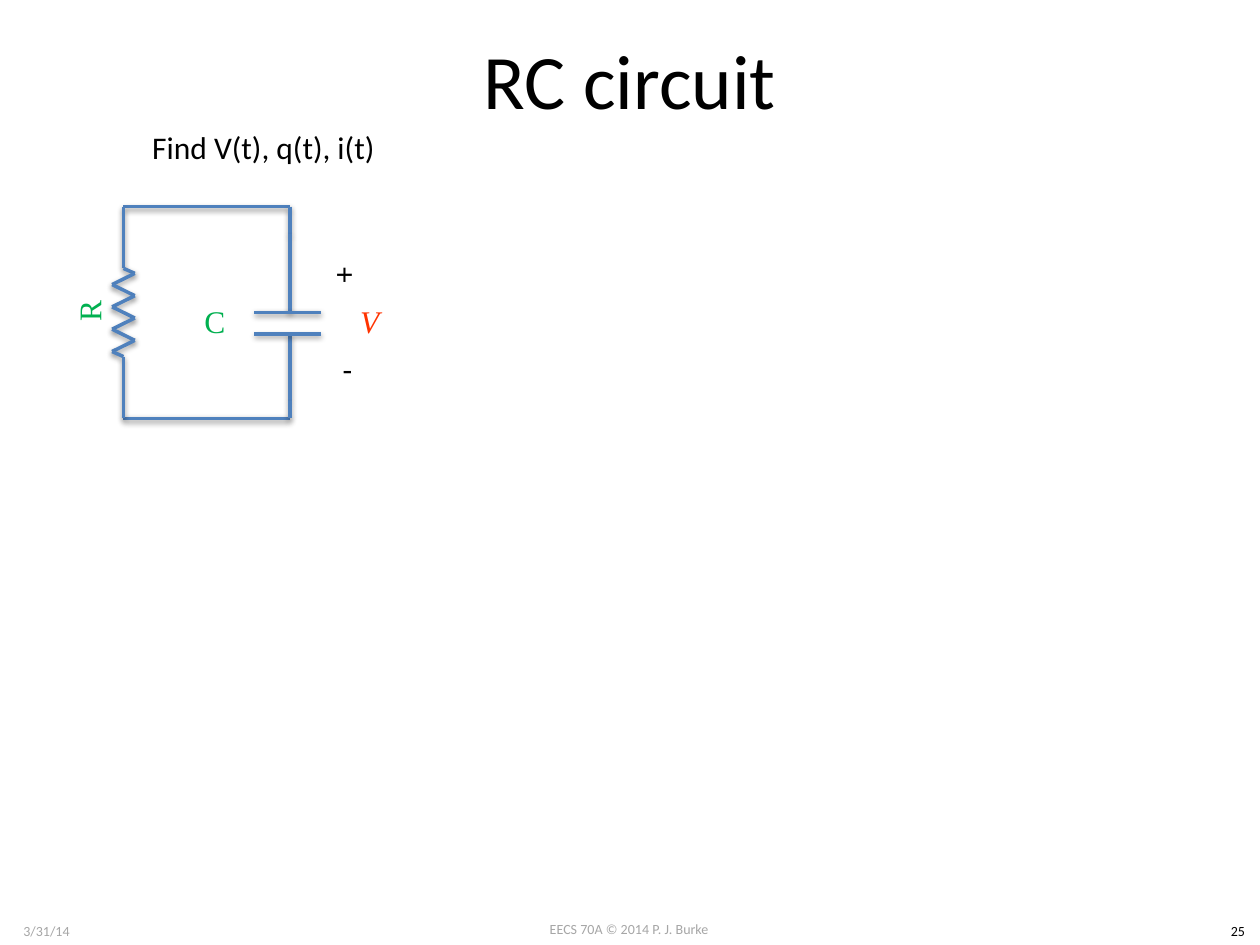
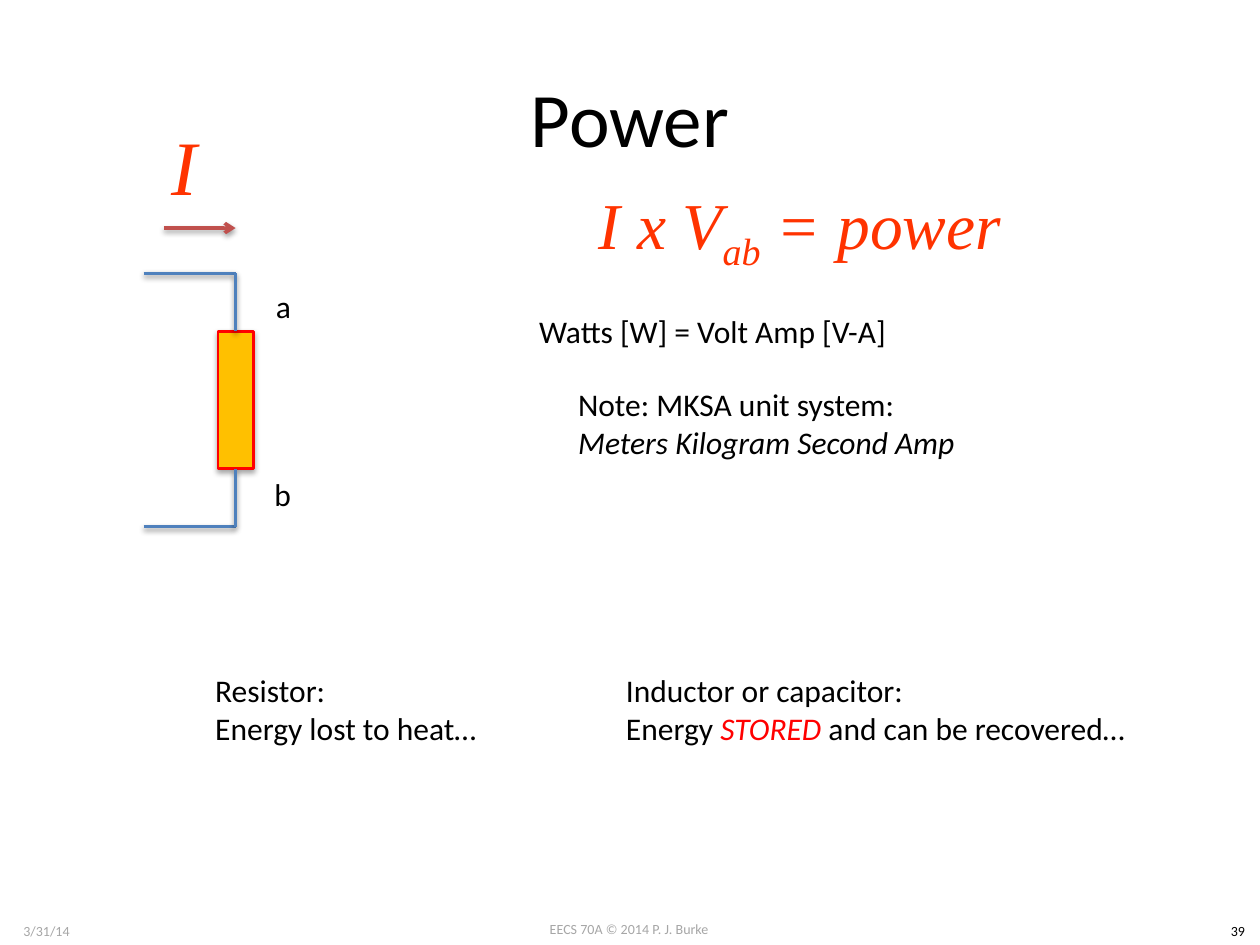
from dataclasses import dataclass
from itertools import pairwise

from lxml import etree
from pptx import Presentation
from pptx import util as u
from pptx.dml.color import RGBColor
from pptx.enum import shapes, text
from pptx.oxml.ns import qn


@dataclass(frozen=True)
class Theme:
    sans: str = "Calibri"
    serif: str = "Times New Roman"
    ink: str = "000000"
    muted: str = "A6A6A6"
    wire: str = "4F81BD"
    current: str = "C0504D"
    component: str = "00B050"
    quantity: str = "FF3300"
    alert: str = "FF0000"
    element: str = "FFC000"
    title: float = 44
    formula: float = 37.4
    body: float = 18
    footer: float = 8
    wire_width: float = 2
    border_width: float = 1.5


THEME = Theme()
LEFT, CENTER = text.PP_ALIGN.LEFT, text.PP_ALIGN.CENTER
BODY = dict(name=THEME.sans, size=THEME.body, color=THEME.ink)
TITLE = BODY | dict(size=THEME.title)
FOOTER = BODY | dict(size=THEME.footer, color=THEME.muted)
PAGE_NUMBER = FOOTER | dict(color=THEME.ink)
COMPONENT = BODY | dict(name=THEME.serif, color=THEME.component)
QUANTITY = COMPONENT | dict(color=THEME.quantity, italic=True)
BIG_QUANTITY = QUANTITY | dict(size=THEME.title)
FORMULA = QUANTITY | dict(size=THEME.formula)


# --- Text ---
def format_span(span, style):
    for key, value in style.items():
        if key == "color":
            span.font.color.rgb = RGBColor.from_string(value)
        elif key == "baseline":
            span._r.get_or_add_rPr().set("baseline", str(value))
        else:
            setattr(span.font, key, u.Pt(value) if key == "size" else value)


def write(frame, paragraphs, style, align=LEFT):
    """Each paragraph is a string or a list of (words, style changes)."""
    for index, spans in enumerate(paragraphs):
        para = frame.paragraphs[0] if index == 0 else frame.add_paragraph()
        para.alignment = align
        for words, changes in [(spans, {})] if isinstance(spans, str) else spans:
            if words == "\n":
                para.add_line_break()
                continue
            span = para.add_run()
            span.text = words
            format_span(span, style | changes)


def add_text(page, place, paragraphs, style=BODY, align=LEFT, wrap=False):
    """A box that fits its text."""
    box = page.shapes.add_textbox(*map(u.Inches, place))
    frame = box.text_frame
    frame.word_wrap = wrap
    frame.auto_size = text.MSO_AUTO_SIZE.SHAPE_TO_FIT_TEXT
    write(frame, paragraphs, style, align)
    return box


def add_symbol(page, place, spans, style):
    """A box of fixed size with its text in the middle."""
    box = add_text(page, place, [spans], style, CENTER, wrap=True)
    box.text_frame.auto_size = text.MSO_AUTO_SIZE.NONE
    box.text_frame.vertical_anchor = text.MSO_ANCHOR.MIDDLE
    return box


# --- Lines and shapes ---
def add_shadow(shape, distance, opacity):
    effects = etree.SubElement(shape._element.spPr, qn("a:effectLst"))
    shadow = etree.SubElement(effects, qn("a:outerShdw"), blurRad="40000",
                              dist=str(distance), dir="5400000", rotWithShape="0")
    color = etree.SubElement(shadow, qn("a:srgbClr"), val=THEME.ink)
    etree.SubElement(color, qn("a:alpha"), val=str(opacity * 1000))


def set_line(shape, color, width):
    shape.line.color.rgb = RGBColor.from_string(color)
    shape.line.width = u.Pt(width)


def add_wire(page, *points, color=THEME.wire, arrow=False):
    """Join the points with straight lines and return the last line."""
    for start, end in pairwise(points):
        line = page.shapes.add_connector(
            shapes.MSO_CONNECTOR.STRAIGHT, *map(u.Inches, start + end))
        set_line(line, color, THEME.wire_width)
        if arrow:
            outline = line._element.spPr.find(qn("a:ln"))
            etree.SubElement(outline, qn("a:tailEnd"), type="arrow")
        add_shadow(line, 20000, 38)
    return line


def add_element(page, place):
    box = page.shapes.add_shape(shapes.MSO_SHAPE.RECTANGLE, *map(u.Inches, place))
    box.fill.solid()
    box.fill.fore_color.rgb = RGBColor.from_string(THEME.element)
    set_line(box, THEME.alert, THEME.border_width)
    add_shadow(box, 23000, 35)
    return box


# --- Shared page ---
def add_page(deck, title, title_top, number):
    page = deck.slides.add_slide(deck.slide_layouts[5])
    for place, words, style in (
        ((3.83, 7.26, 2.33, 0.24), "EECS 70A © 2014 P. J. Burke", FOOTER),
        ((0, 7.27, 0.74, 0.24), "3/31/14", FOOTER),
        ((9.65, 7.27, 0.35, 0.24), number, PAGE_NUMBER),
    ):
        add_text(page, place, [words], style, CENTER, wrap=True)
    heading = page.shapes.title
    bounds = dict(left=0.5, top=title_top, width=9, height=1.25)
    for key, value in bounds.items():
        setattr(heading, key, u.Inches(value))
    heading.text_frame.vertical_anchor = text.MSO_ANCHOR.MIDDLE
    write(heading.text_frame, [title], TITLE, CENTER)
    return page


# --- Slides ---
def add_rc_circuit(deck):
    page = add_page(deck, "RC circuit", 0, "25")
    add_text(page, (1.11, 0.97, 1.99, 0.4), ["Find V(t), q(t), i(t)"])
    left, right, top, bottom = 0.98, 2.3, 1.64, 3.32

    # Top and bottom rails
    for y in (top, bottom):
        add_wire(page, (left, y), (right, y))

    # Capacitor: leads, then plates
    upper_plate, lower_plate = 2.48, 2.65
    add_wire(page, (right, top), (right, 1.86), (right, upper_plate))
    add_wire(page, (right, lower_plate), (right, 3.18), (right, bottom))
    for y in (upper_plate, lower_plate):
        add_wire(page, (2.02, y), (2.55, y))
    add_symbol(page, (1.11, 2.18, 1.19, 0.73), "C", COMPONENT)
    add_text(page, (2.59, 1.99, 0.33, 0.4), ["+"]).rotation = 90
    add_text(page, (2.62, 2.73, 0.28, 0.4), ["-"])
    add_symbol(page, (2.55, 2.24, 0.77, 0.61), "V", QUANTITY)

    # Resistor: eight zigzag corners between two leads
    corners = [(left + (0.09, -0.09)[i % 2], 2.17 + i * 0.62 / 7) for i in range(8)]
    add_wire(page, (left, top), (left, 2.13), *corners, (left, 2.83), (left, bottom))
    add_symbol(page, (0.11, 2.1, 1.19, 0.73), "R", COMPONENT).rotation = 270


def add_power(deck):
    page = add_page(deck, "Power", 0.3, "39")

    # Circuit element with its terminals
    add_text(page, (2.09, 2.23, 0.32, 0.4), ["a"])
    add_text(page, (2.08, 3.72, 0.34, 0.4), ["b"])
    element = add_element(page, (1.73, 2.63, 0.28, 1.09))
    for terminal_y, element_y, side in ((2.17, 2.63, 0), (4.18, 3.72, 2)):
        lead = add_wire(page, (1.14, terminal_y), (1.87, terminal_y), (1.87, element_y))
        lead.end_connect(element, side)

    # Current
    add_wire(page, (1.3, 1.81), (1.87, 1.81), color=THEME.current, arrow=True)
    add_symbol(page, (0.84, 0.8, 1.25, 1.01), "I", BIG_QUANTITY)

    # Formula and units
    formula = [("I x V", {}), ("ab", dict(baseline=-25000)), (" = power", {})]
    add_symbol(page, (4.49, 1.31, 3.72, 1.01), formula, FORMULA)
    add_text(page, (4.18, 2.43, 3, 0.4), ["Watts [W] = Volt Amp [V-A]"])
    add_text(page, (4.49, 3.01, 3.24, 0.71), [[
        ("Note: MKSA unit system:", {}), ("\n", {}),
        ("Meters Kilogram Second Amp", dict(italic=True))]])

    # Where the energy goes
    add_text(page, (1.61, 5.28, 2.31, 0.71), ["Resistor:", "Energy lost to heat…"])
    add_text(page, (4.87, 5.28, 4.23, 0.71), ["Inductor or capacitor:", [
        ("Energy ", {}), ("STORED", dict(color=THEME.alert, italic=True)),
        (" and can be recovered…", {})]])


def main():
    deck = Presentation()
    deck.slide_width, deck.slide_height = u.Inches(10), u.Inches(7.5)
    add_rc_circuit(deck)
    add_power(deck)
    deck.save("out.pptx")


if __name__ == "__main__":
    main()
